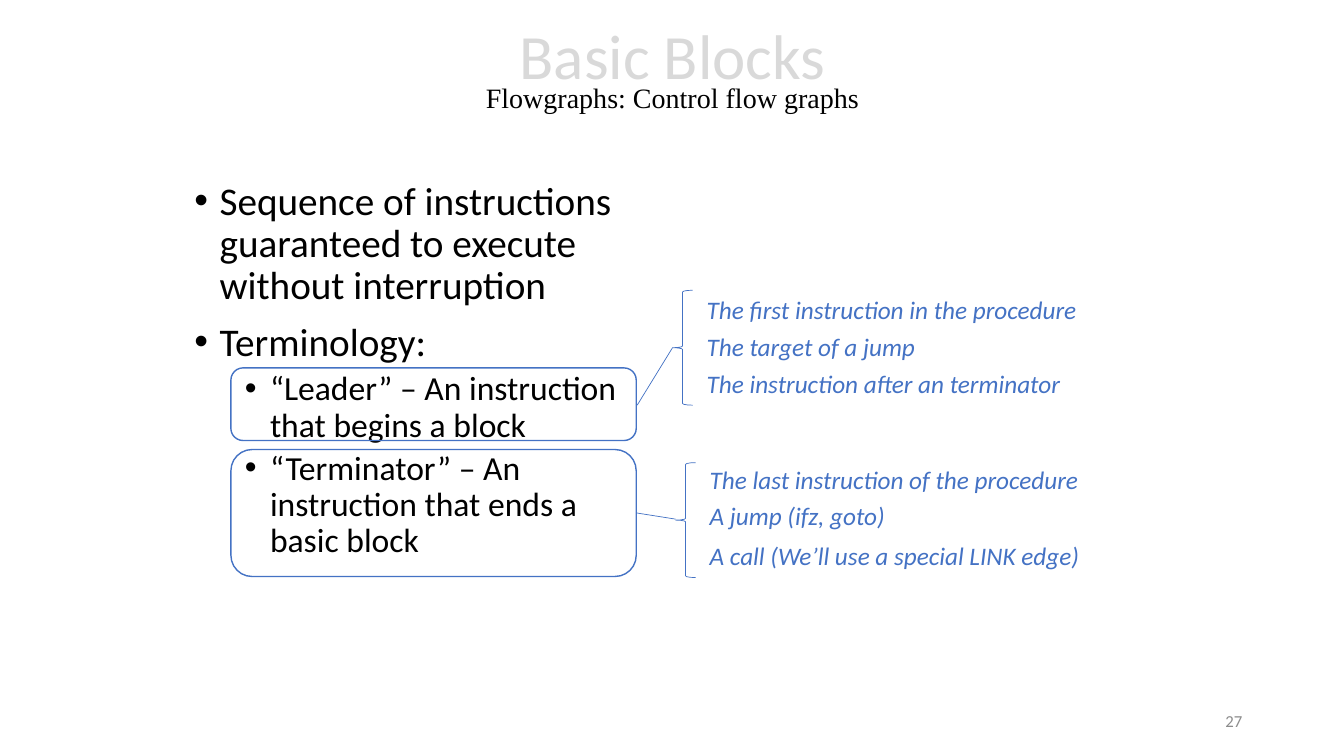
from lxml import etree
from pptx import Presentation
from pptx.dml.color import RGBColor
from pptx.enum import shapes, text
from pptx.oxml.ns import qn
from pptx.util import Inches, Pt

BLUE = RGBColor(0x44, 0x72, 0xC4)
BLACK = RGBColor(0x00, 0x00, 0x00)
PALE_GREY = RGBColor(0xD9, 0xD9, 0xD9)
NUMBER_GREY = RGBColor(0x8C, 0x8C, 0x8C)

# (text, level)
DEFINITIONS = [
    ("Sequence of instructions guaranteed to execute without interruption", 0),
    ("Terminology:", 0),
    ("“Leader” – An instruction that begins a block", 1),
    ("“Terminator” – An instruction that ends a basic block", 1),
]
# size, space before, left indent for each level
LEVELS = [(28, 10, 0.25), (24, 5, 0.75)]

# Each term: frame top and height, link start and end, brace top, notes
TERMS = [
    dict(frame=(3.65, 0.72), link=(4.02, 3.45), brace=(6.67, 2.88), notes=[
        ("The first instruction in the procedure", 2.87, 3.97),
        ("The target of a jump", 3.24, 2.34),
        ("The instruction after an terminator", 3.61, 3.78)]),
    dict(frame=(4.46, 1.26), link=(5.09, 5.15), brace=(6.7, 4.59), notes=[
        ("The last instruction of the procedure", 4.56, 3.9),
        ("A jump (ifz, goto)", 4.91, 1.97),
        ("A call (We’ll use a special LINK edge)", 5.31, 3.92)]),
]
FRAME_LEFT, FRAME_WIDTH, LINK_LEFT = 2.29, 4.02, 6.32
BRACE_WIDTH, BRACE_HEIGHT, NOTE_OFFSET = 0.2, 1.14, 0.24


def apply(target, **values):
    for name, value in values.items():
        setattr(target, name, value)


def add_run(paragraph, words, size, color, font="Calibri", italic=False):
    run = paragraph.add_run()
    run.text = words
    apply(run.font, size=Pt(size), name=font, italic=italic)
    run.font.color.rgb = color


def add_textbox(slide, box, **frame_format):
    frame = slide.shapes.add_textbox(*map(Inches, box)).text_frame
    apply(frame, **{"word_wrap": True, **frame_format})
    return frame


def add_bullet(paragraph, indent):
    props = paragraph._p.get_or_add_pPr()
    props.set("marL", str(Inches(indent)))
    props.set("indent", str(Inches(-0.25)))
    etree.SubElement(props, qn("a:buFont")).set("typeface", "Arial")
    etree.SubElement(props, qn("a:buChar")).set("char", "•")


def add_outline(slide, kind, box, width):
    outline = slide.shapes.add_shape(kind, *map(Inches, box))
    outline.shadow.inherit = False
    outline.fill.background()
    outline.line.color.rgb = BLUE
    outline.line.width = Pt(width)


def add_link(slide, *ends):
    link = slide.shapes.add_connector(shapes.MSO_CONNECTOR.STRAIGHT,
                                      *map(Inches, ends))
    link.line.color.rgb = BLUE
    link.line.width = Pt(0.5)
    etree.SubElement(link._element.spPr, qn("a:effectLst"))


def add_title(slide):
    frame = add_textbox(slide, (1.67, 0.02, 10, 1.45),
                        vertical_anchor=text.MSO_ANCHOR.MIDDLE)
    heading = frame.paragraphs[0]
    apply(heading, alignment=text.PP_ALIGN.CENTER, line_spacing=0.7)
    add_run(heading, "Basic Blocks", 45, PALE_GREY)
    heading.add_line_break()
    add_run(heading, "Flowgraphs: Control flow graphs", 20, BLACK,
            "Times New Roman")


def add_definitions(slide):
    frame = add_textbox(slide, (1.83, 1.75, 4.63, 4.95))
    for index, (words, level) in enumerate(DEFINITIONS):
        entry = frame.add_paragraph() if index else frame.paragraphs[0]
        size, before, indent = LEVELS[level]
        apply(entry, level=level, line_spacing=0.9, space_before=Pt(before))
        add_bullet(entry, indent)
        add_run(entry, words, size, BLACK)


def add_term(slide, frame, link, brace, notes):
    top, height = frame
    brace_left, brace_top = brace
    add_outline(slide, shapes.MSO_SHAPE.ROUNDED_RECTANGLE,
                (FRAME_LEFT, top, FRAME_WIDTH, height), 1)
    add_link(slide, LINK_LEFT, link[0], brace_left, link[1])
    add_outline(slide, shapes.MSO_SHAPE.LEFT_BRACE,
                (brace_left, brace_top, BRACE_WIDTH, BRACE_HEIGHT), 0.5)
    for words, note_top, width in notes:
        note = add_textbox(slide,
                           (brace_left + NOTE_OFFSET, note_top, width, 0.4),
                           word_wrap=False,
                           auto_size=text.MSO_AUTO_SIZE.SHAPE_TO_FIT_TEXT)
        add_run(note.paragraphs[0], words, 18, BLUE, italic=True)


def add_slide_number(slide):
    frame = add_textbox(slide, (9.42, 6.95, 3, 0.4),
                        vertical_anchor=text.MSO_ANCHOR.MIDDLE)
    number = frame.paragraphs[0]
    number.alignment = text.PP_ALIGN.RIGHT
    add_run(number, "27", 12, NUMBER_GREY)


def main():
    deck = Presentation()
    apply(deck, slide_width=Inches(13.33), slide_height=Inches(7.5))
    slide = deck.slides.add_slide(deck.slide_layouts[6])

    # Heading and definitions
    add_title(slide)
    add_definitions(slide)

    # Framed terms with their braces and notes
    for term in TERMS:
        add_term(slide, **term)

    # Footer
    add_slide_number(slide)
    deck.save("out.pptx")


if __name__ == "__main__":
    main()
